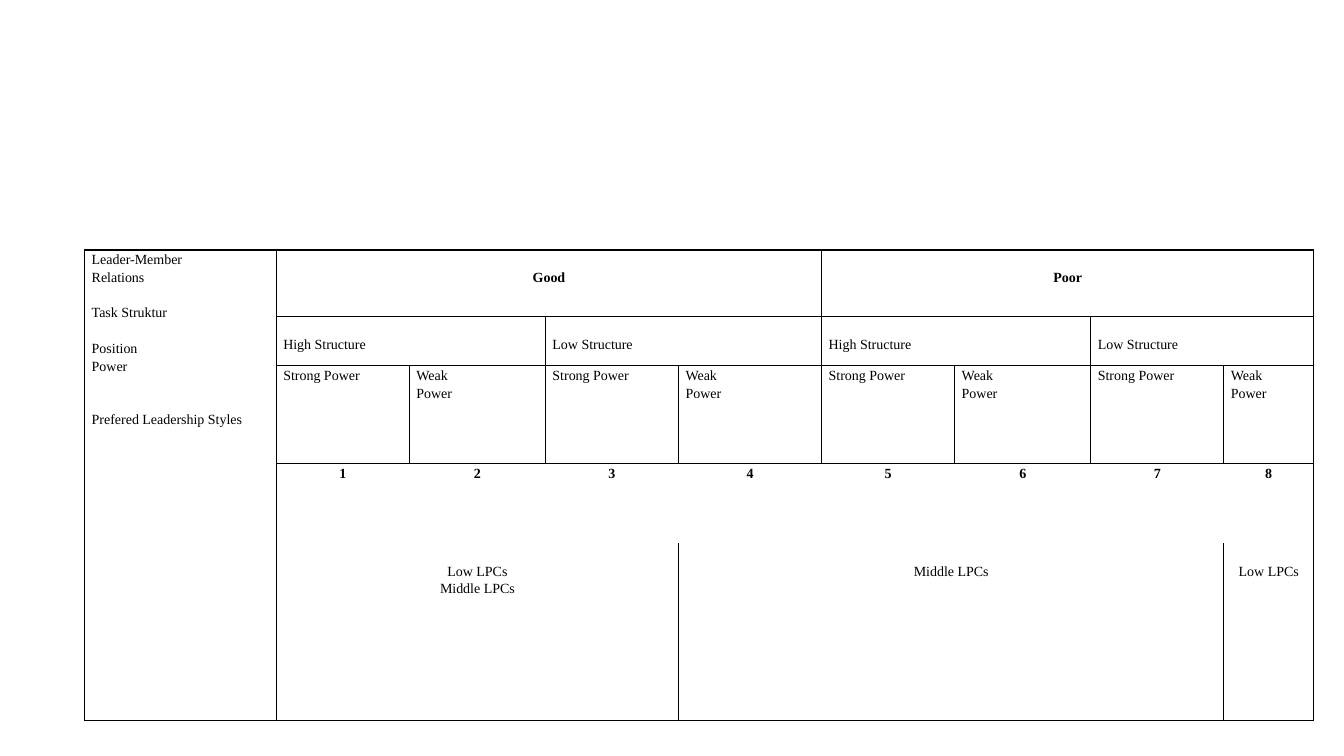
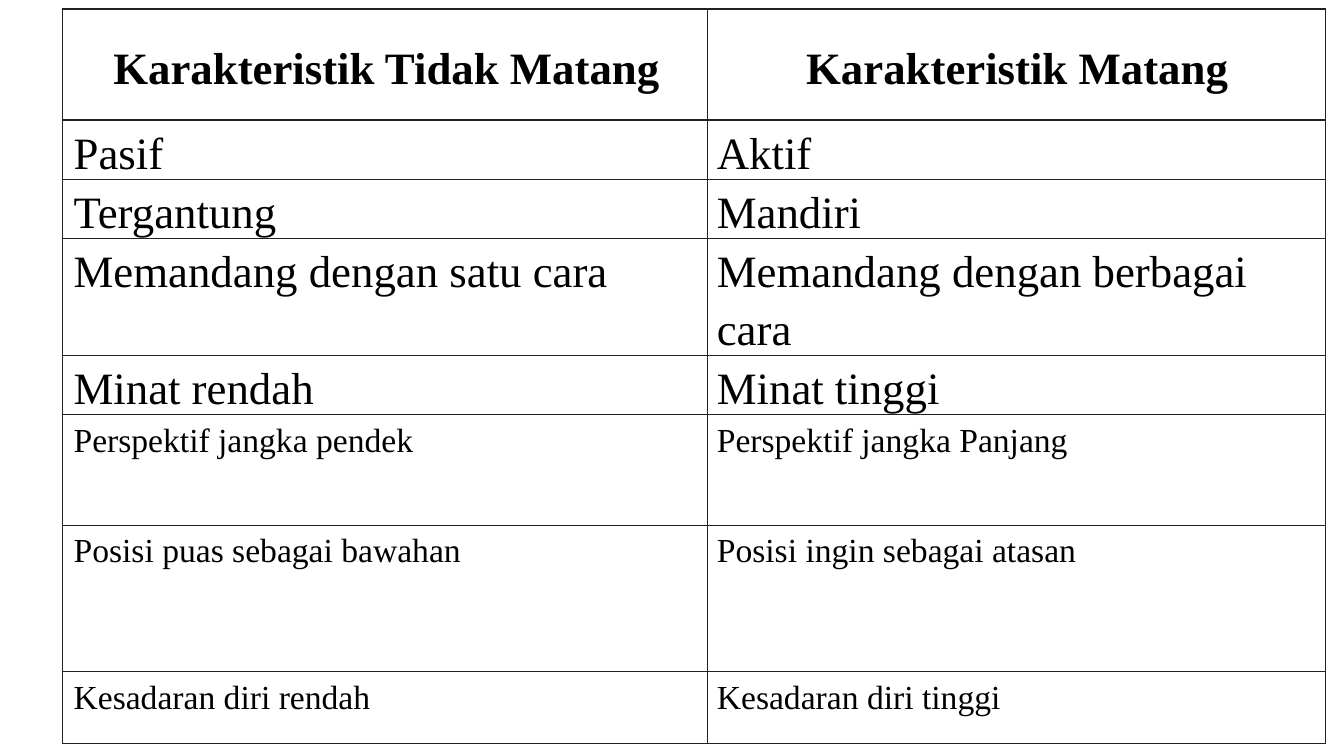
"""Two table slides: leadership contingency grid and maturity characteristics."""
from lxml import etree
from pptx import Presentation
from pptx import util as u
from pptx.dml.color import RGBColor
from pptx.enum import text
from pptx.oxml import ns

FONT = "Times New Roman"
BLACK = RGBColor(0x00, 0x00, 0x00)
CHARCOAL = RGBColor(0x22, 0x1F, 0x1F)
LEFT, CENTER, JUSTIFY = text.PP_ALIGN.LEFT, text.PP_ALIGN.CENTER, text.PP_ALIGN.JUSTIFY
LINE_SPACING = 1.15
BLANK_LINE = 12.7


def add_grid(slide, left, top, widths, heights):
    frame = slide.shapes.add_table(
        len(heights), len(widths), u.Inches(left), u.Inches(top),
        u.Inches(sum(widths)), u.Inches(sum(heights)))
    table = frame.table
    table.first_row = table.horz_banding = False
    for column, width in zip(table.columns, widths):
        column.width = u.Inches(width)
    for row, height in zip(table.rows, heights):
        row.height = u.Inches(height)
    return table


def style_cell(cell, content, size, align, margins, color, bold=False, sides="LRTB"):
    properties = cell._tc.get_or_add_tcPr()
    for side in "LRTB":
        line = etree.SubElement(properties, ns.qn(f"a:ln{side}"), w=str(u.Pt(1)))
        if side in sides:
            fill = etree.SubElement(line, ns.qn("a:solidFill"))
            etree.SubElement(fill, ns.qn("a:srgbClr"), val=str(color))
        else:
            etree.SubElement(line, ns.qn("a:noFill"))
    cell.fill.background()
    cell.margin_left, cell.margin_top, cell.margin_right, cell.margin_bottom = map(u.Inches, margins)
    if cell.is_spanned:
        return
    cell.text_frame.text = content
    for paragraph in cell.text_frame.paragraphs:
        paragraph.alignment = align
        paragraph.line_spacing = LINE_SPACING
        for run in paragraph.runs:
            run.font.name = FONT
            run.font.size = u.Pt(size)
            run.font.bold = bold
            run.font.color.rgb = BLACK


presentation = Presentation()
presentation.slide_width = u.Inches(13.33)
presentation.slide_height = u.Inches(7.5)
blank_layout = presentation.slide_layouts[6]

slide = presentation.slides.add_slide(blank_layout)
table = add_grid(slide, 0.84, 2.48,
                 [1.9, 1.32, 1.35, 1.32, 1.42, 1.32, 1.35, 1.32, 0.89],
                 [0.66, 0.49, 0.97, 0.79, 1.76])

factors = "Leader-Member\nRelations\nTask Struktur\nPosition\nPower\nPrefered Leadership Styles"
blocks = [
    (0, 0, 5, 1, factors, JUSTIFY, 0, False, "LRTB"),
    (0, 1, 1, 4, "Good", CENTER, 0.18, True, "LRTB"),
    (0, 5, 1, 4, "Poor", CENTER, 0.18, True, "LRTB"),
    (4, 1, 1, 3, "Low LPCs\nMiddle LPCs", CENTER, 0.18, False, "LRB"),
    (4, 4, 1, 4, "Middle LPCs", CENTER, 0.18, False, "LRB"),
    (4, 8, 1, 1, "Low LPCs", CENTER, 0.18, False, "LRB"),
]
for pair in range(4):
    structure = ["High Structure", "Low Structure"][pair % 2]
    blocks.append((1, 1 + 2 * pair, 1, 2, structure, JUSTIFY, 0.18, False, "LRTB"))
for number in range(1, 9):
    power = "Strong Power" if number % 2 else "Weak\nPower"
    sides = {1: "LT", 8: "TR"}.get(number, "T")
    blocks.append((2, number, 1, 1, power, JUSTIFY, 0, False, "LRTB"))
    blocks.append((3, number, 1, 1, str(number), CENTER, 0, True, sides))

for row, column, height, width, content, align, top, bold, sides in blocks:
    if height * width > 1:
        table.cell(row, column).merge(table.cell(row + height - 1, column + width - 1))
    for y in range(row, row + height):
        for x in range(column, column + width):
            style_cell(table.cell(y, x), content, 10, align, (0.07, top, 0.07, 0), BLACK, bold, sides)

factor_paragraphs = table.cell(0, 0).text_frame.paragraphs
for index, blank_lines in [(2, 1), (3, 1), (5, 2)]:
    factor_paragraphs[index].space_before = u.Pt(BLANK_LINE * blank_lines)

slide = presentation.slides.add_slide(blank_layout)
characteristics = [
    ("Karakteristik Tidak Matang", "Karakteristik Matang", 1.1, 32),
    ("Pasif", "Aktif", 0.57, 32),
    ("Tergantung", "Mandiri", 0.57, 32),
    ("Memandang dengan satu cara", "Memandang dengan berbagai cara", 1.16, 32),
    ("Minat rendah", "Minat tinggi", 0.57, 32),
    ("Perspektif jangka pendek", "Perspektif jangka Panjang", 1.1, 24),
    ("Posisi puas sebagai bawahan", "Posisi ingin sebagai atasan", 1.45, 24),
    ("Kesadaran diri rendah", "Kesadaran diri tinggi", 0.71, 24),
]
table = add_grid(slide, 0.62, 0.09, [6.4, 6.13], [entry[2] for entry in characteristics])
for row, (immature, mature, height, size) in enumerate(characteristics):
    heading = row == 0
    for column, content in enumerate((immature, mature)):
        cell = table.cell(row, column)
        margins = (0.09 if column else 0.11, 0.02, 0.08, 0)
        style_cell(cell, content, size, CENTER if heading else LEFT, margins, CHARCOAL, heading)
        if heading:
            cell.vertical_anchor = text.MSO_ANCHOR.MIDDLE

presentation.save("out.pptx")
